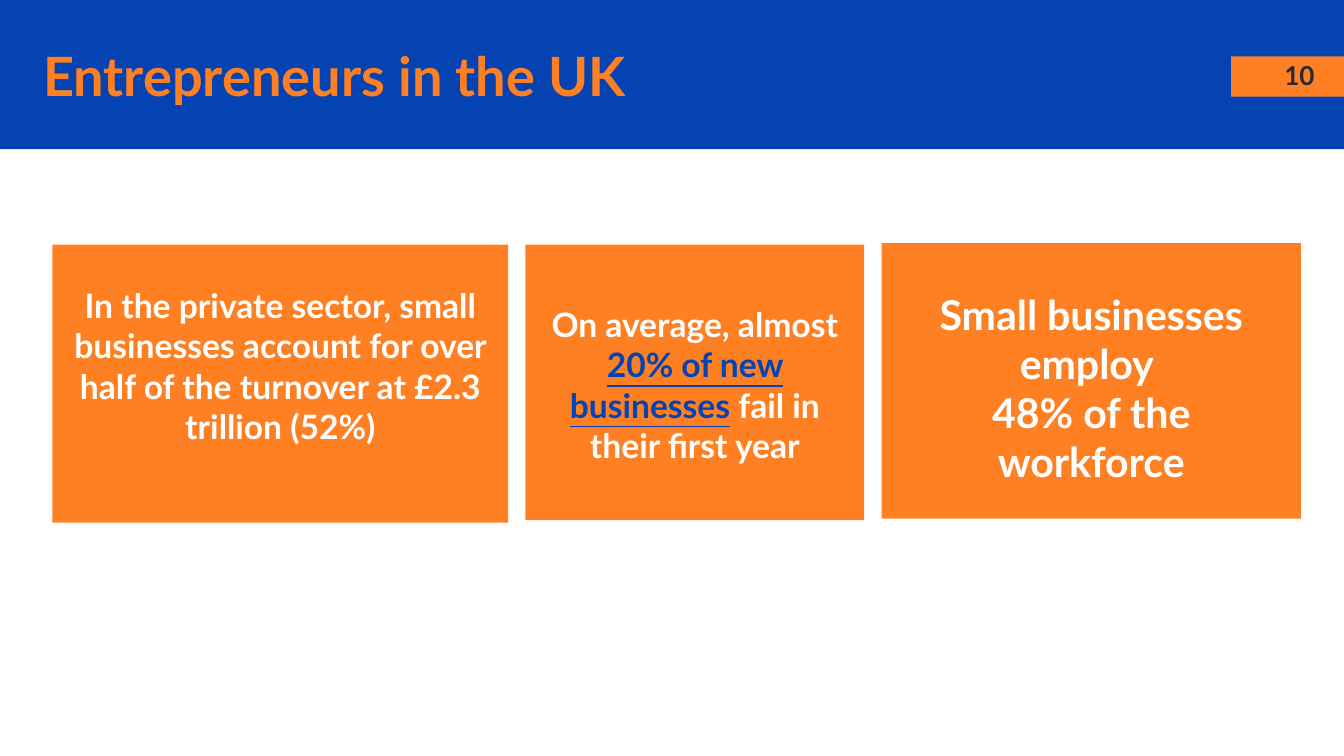
from pptx import Presentation
from pptx.dml.color import RGBColor
from pptx.enum.shapes import MSO_SHAPE
from pptx.enum.text import MSO_ANCHOR, PP_ALIGN
from pptx.util import Inches, Pt

RECTANGLE = MSO_SHAPE.RECTANGLE
TOP, MIDDLE = MSO_ANCHOR.TOP, MSO_ANCHOR.MIDDLE
LEFT, CENTER, RIGHT = PP_ALIGN.LEFT, PP_ALIGN.CENTER, PP_ALIGN.RIGHT

BLUE = RGBColor(0x05, 0x43, 0xB3)
ORANGE = RGBColor(0xFF, 0x80, 0x22)
WHITE = RGBColor(0xFF, 0xFF, 0xFF)
DARK = RGBColor(0x26, 0x2A, 0x33)
FONT = "Lato"
TITLE_ONLY = 5

FACTS = [
    ((0.39, 1.82, 3.39, 2.07), 0.3, 18, [[
        ("In the private sector, small businesses account for over "
         "half of the turnover at £2.3 trillion (52%)", False)]]),
    ((3.91, 1.82, 2.52, 2.05), 0.44, 18, [[
        ("On average, almost ", False),
        ("20% of new businesses", True),
        (" fail in their first year", False)]]),
    ((6.56, 1.81, 3.12, 2.05), 0.34, 22, [
        [("Small businesses employ ", False)],
        [("48% of the workforce", False)]]),
]


def add_rectangle(page, box, color):
    shape = page.shapes.add_shape(RECTANGLE, *map(Inches, box))
    shape.shadow.inherit = False
    shape.fill.solid()
    shape.fill.fore_color.rgb = color
    shape.line.fill.background()
    return shape


def set_frame(frame, anchor, top=0.1, side=0.1):
    frame.word_wrap = True
    frame.vertical_anchor = anchor
    frame.margin_left = frame.margin_right = Inches(side)
    frame.margin_top = Inches(top)
    frame.margin_bottom = Inches(0.1)


def add_span(para, text, size, color):
    span = para.add_run()
    span.text = text
    span.font.name = FONT
    span.font.size = Pt(size)
    span.font.bold = True
    span.font.color.rgb = color
    return span


def add_header(page, box, title_text, number):
    left, top, width, height = box
    add_rectangle(page, box, BLUE)
    add_rectangle(page, (left + width - 0.84, top + 0.42, 0.84, 0.3), ORANGE)

    title = page.shapes.title
    title.left, title.top = Inches(left + 0.22), Inches(top + 0.28)
    title.width, title.height = Inches(8.65), Inches(0.56)
    set_frame(title.text_frame, MIDDLE)
    para = title.text_frame.paragraphs[0]
    para.alignment = LEFT
    para.line_spacing = 1.0
    add_span(para, title_text, 29, ORANGE)
    page.shapes._spTree.append(title._element)

    number_box = page.shapes.add_textbox(
        Inches(left + width - 0.6), Inches(top + 0.42), Inches(0.48), Inches(0.27))
    set_frame(number_box.text_frame, MIDDLE)
    para = number_box.text_frame.paragraphs[0]
    para.alignment = RIGHT
    add_span(para, number, 14, DARK)


def add_fact(page, box, text_top, size, lines):
    frame = add_rectangle(page, box, ORANGE).text_frame
    set_frame(frame, TOP, text_top, 0.12)
    for index, spans in enumerate(lines):
        para = frame.add_paragraph() if index else frame.paragraphs[0]
        para.alignment = CENTER
        for text, highlighted in spans:
            span = add_span(para, text, size, BLUE if highlighted else WHITE)
            span.font.underline = highlighted


def main():
    deck = Presentation()
    deck.slide_width = Inches(10)
    deck.slide_height = deck.slide_width * 9 // 16
    page = deck.slides.add_slide(deck.slide_layouts[TITLE_ONLY])
    add_header(page, (0, 0, 10, 1.11), "Entrepreneurs in the UK", "10")
    for fact in FACTS:
        add_fact(page, *fact)
    deck.save("out.pptx")


if __name__ == "__main__":
    main()
